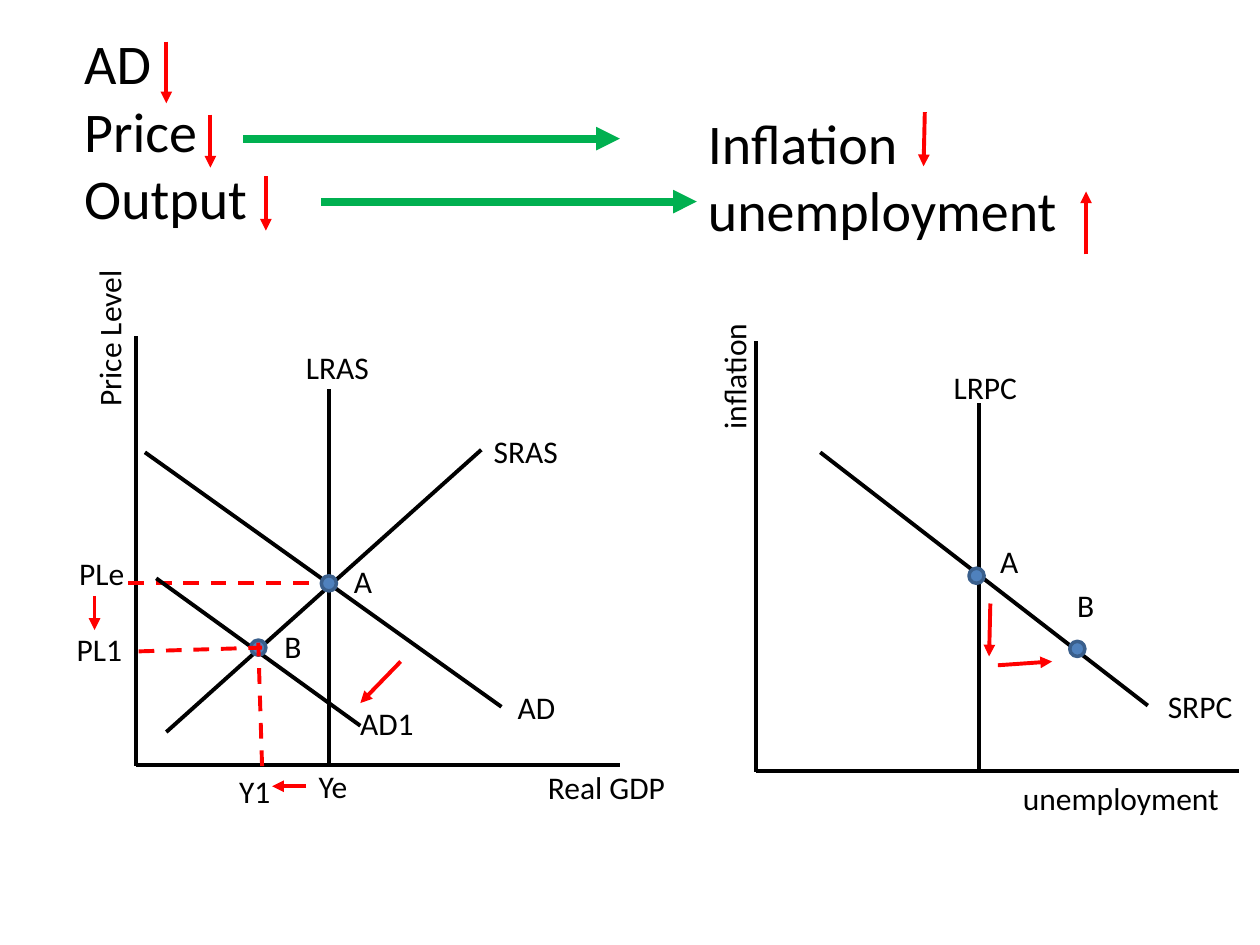
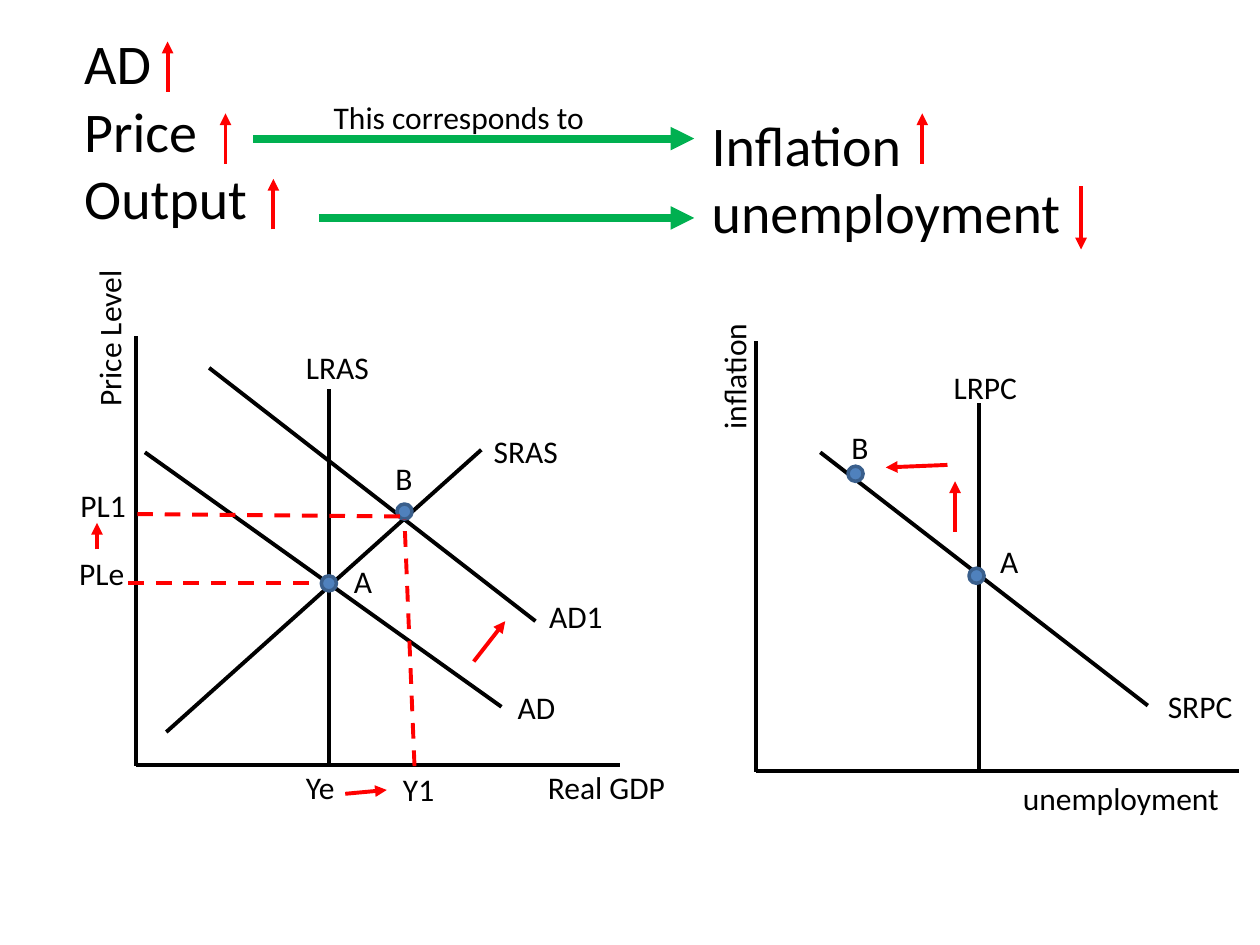
from lxml import etree
from pptx import Presentation
from pptx.dml.color import RGBColor
from pptx.enum.dml import MSO_LINE_DASH_STYLE as Dash
from pptx.enum.shapes import MSO_CONNECTOR as Connector, MSO_SHAPE as Shape
from pptx.enum.text import MSO_AUTO_SIZE as AutoSize
from pptx.oxml.ns import qn
from pptx.util import Inches, Pt

FONT = "Calibri"
BLACK, RED, GREEN = "000000", "FF0000", "00B050"
DOT_FILL, DOT_EDGE = "4F81BD", "3A5F8C"
DOT_SIZE = 0.12
LABEL_WIDTH, LABEL_HEIGHT, POINT_WIDTH = 1.33, 0.4, 0.34


def rgb(color):
    return RGBColor.from_string(color)


def add_line(page, start, end, color=BLACK, weight=2.25):
    line = page.shapes.add_connector(
        Connector.STRAIGHT, *(Inches(value) for value in (*start, *end)))
    line.line.color.rgb = rgb(color)
    line.line.width = Pt(weight)
    etree.SubElement(line._element.spPr, qn("a:effectLst"))
    return line


def add_guide(page, start, end):
    """Dashed line from a point to an axis."""
    add_line(page, start, end, RED).line.dash_style = Dash.DASH


def add_arrow(page, start, end, color=RED, weight=2.25):
    arrow = add_line(page, start, end, color, weight)
    etree.SubElement(arrow.line._get_or_add_ln(), qn("a:tailEnd"), type="triangle")


def add_text(page, lines, left, top, width=LABEL_WIDTH, height=LABEL_HEIGHT,
             size=18, rotation=0):
    box = page.shapes.add_textbox(*(Inches(v) for v in (left, top, width, height)))
    box.rotation = rotation
    frame = box.text_frame
    frame.word_wrap = True
    frame.auto_size = AutoSize.SHAPE_TO_FIT_TEXT
    frame.text = "\n".join(lines)
    for para in frame.paragraphs:
        para.font.name = FONT
        para.font.size = Pt(size)
        para.font.color.rgb = rgb(BLACK)


def add_labels(page, labels):
    for text, left, top in labels:
        add_text(page, [text], left, top)


def add_point(page, name, dot, label):
    left, top = dot
    circle = page.shapes.add_shape(
        Shape.OVAL, Inches(left), Inches(top), Inches(DOT_SIZE), Inches(DOT_SIZE))
    circle.shadow.inherit = False
    circle.fill.solid()
    circle.fill.fore_color.rgb = rgb(DOT_FILL)
    circle.line.color.rgb = rgb(DOT_EDGE)
    circle.line.width = Pt(2)
    add_text(page, [name], *label, width=POINT_WIDTH)


def draw_ad_as(page):
    """Aggregate demand and supply diagram at its first equilibrium."""
    for start, end in (
        ((1.08, 2.67), (1.08, 6.08)),  # price level axis
        ((4.92, 6.07), (1.08, 6.07)),  # real GDP axis
        ((2.61, 3.09), (2.61, 6.06)),  # LRAS
        ((1.15, 3.59), (3.98, 5.61)),  # AD
        ((1.32, 5.81), (3.82, 3.57)),  # SRAS
    ):
        add_line(page, start, end)
    add_text(page, ["Price Level"], 0.2, 2.46, rotation=270)
    add_labels(page, [("Real GDP", 4.25, 6.05), ("LRAS", 2.33, 2.71),
                      ("PLe", 0.53, 4.35), ("AD", 4.01, 5.41), ("SRAS", 3.82, 3.38)])
    add_guide(page, (1.02, 4.63), (2.61, 4.63))
    add_point(page, "A", (2.55, 4.57), (2.71, 4.41))


def draw_phillips(page):
    """Phillips curve diagram at its first equilibrium."""
    for start, end in (
        ((9.83, 6.12), (6, 6.12)),     # unemployment axis
        ((6, 2.71), (6, 6.13)),        # inflation axis
        ((6.51, 3.59), (9.11, 5.6)),   # SRPC
        ((7.77, 3.2), (7.77, 6.1)),    # LRPC
    ):
        add_line(page, start, end)
    add_text(page, ["unemployment"], 8.02, 6.13, width=2.03)
    add_text(page, ["inflation"], 5.16, 2.64, rotation=270)
    add_labels(page, [("SRPC", 9.17, 5.4), ("LRPC", 7.47, 2.87)])
    add_point(page, "A", (7.69, 4.51), (7.84, 4.25))


def draw_shift(page, shift):
    """Demand moves to AD1 and the economy from A to B in both diagrams."""
    add_line(page, *shift["AD1 curve"])
    add_point(page, "B", *shift["AD-AS point"])
    for start, end in shift["guides"]:
        add_guide(page, start, end)
    add_labels(page, shift["labels"])
    add_point(page, "B", *shift["Phillips point"])
    for start, end in shift["moves"]:
        add_arrow(page, start, end)


def draw_summary(page, summary):
    """Large terms at the top, their directions and the links between them."""
    add_text(page, ["AD", "Price", "Output"], 0.57, 0.18, 5.06, 1.72, size=32)
    add_text(page, ["Inflation", "unemployment"], *summary["effects at"],
             5.06, 1.18, size=32)
    for start, end in summary["directions"]:
        add_arrow(page, start, end)
    for start, end in summary["links"]:
        add_arrow(page, start, end, GREEN, 4.5)


def draw_page(deck, shift, summary):
    page = deck.slides.add_slide(deck.slide_layouts[6])
    draw_ad_as(page)
    draw_phillips(page)
    draw_shift(page, shift)
    draw_summary(page, summary)
    return page


FALL = {
    "AD1 curve": ((1.24, 4.59), (2.86, 5.76)),
    "AD-AS point": ((1.99, 5.08), (2.16, 4.93)),
    "guides": [((1.1, 5.17), (2.08, 5.14)), ((2.08, 6.08), (2.05, 5.1))],
    "labels": [("AD1", 2.76, 5.54), ("PL1", 0.51, 4.95),
               ("Y1", 1.8, 6.08), ("Ye", 2.43, 6.04)],
    "Phillips point": ((8.49, 5.09), (8.45, 4.6)),
    "moves": [((3.18, 5.25), (2.86, 5.58)), ((2.43, 6.24), (2.16, 6.24)),
              ((0.75, 4.73), (0.75, 5)), ((7.86, 4.79), (7.85, 5.21)),
              ((7.92, 5.28), (8.35, 5.25))],
}
FALL_SUMMARY = {
    "effects at": (5.52, 0.81),
    "directions": [((1.32, 0.33), (1.32, 0.82)), ((1.67, 0.91), (1.67, 1.33)),
                   ((2.11, 1.4), (2.11, 1.83)), ((7.34, 0.89), (7.33, 1.32)),
                   ((8.62, 2.02), (8.62, 1.52))],
    "links": [((1.93, 1.1), (4.92, 1.1)), ((2.55, 1.6), (5.53, 1.6))],
}
RISE = {
    "AD1 curve": ((1.66, 2.92), (4.25, 4.93)),
    "AD-AS point": ((3.15, 4), (3.04, 3.59)),
    "guides": [((1.09, 4.08), (3.26, 4.1)), ((3.29, 6.08), (3.21, 4.12))],
    "labels": [("AD1", 4.26, 4.69), ("PL1", 0.54, 3.81),
               ("Y1", 3.1, 6.06), ("Ye", 2.33, 6.05)],
    "Phillips point": ((6.73, 3.7), (6.66, 3.35)),
    "moves": [((3.76, 5.25), (4.01, 4.93)), ((2.74, 6.3), (3.07, 6.27)),
              ((0.77, 4.36), (0.77, 4.15)), ((7.58, 4.22), (7.58, 3.82)),
              ((7.52, 3.69), (7.03, 3.71))],
}
RISE_SUMMARY = {
    "effects at": (5.55, 0.83),
    "directions": [((1.33, 0.73), (1.33, 0.33)), ((1.79, 1.3), (1.79, 0.9)),
                   ((2.17, 1.82), (2.17, 1.42)), ((7.32, 1.3), (7.32, 0.9)),
                   ((8.58, 1.48), (8.58, 1.98))],
    "links": [((2.01, 1.1), (5.51, 1.1)), ((2.53, 1.73), (5.51, 1.73))],
}


def main():
    deck = Presentation()
    deck.slide_width, deck.slide_height = Inches(10), Inches(7.5)
    draw_page(deck, FALL, FALL_SUMMARY)
    rise_page = draw_page(deck, RISE, RISE_SUMMARY)
    add_text(rise_page, ["This corresponds to"], 2.55, 0.73, width=2.96)
    deck.save("out.pptx")


if __name__ == "__main__":
    main()
